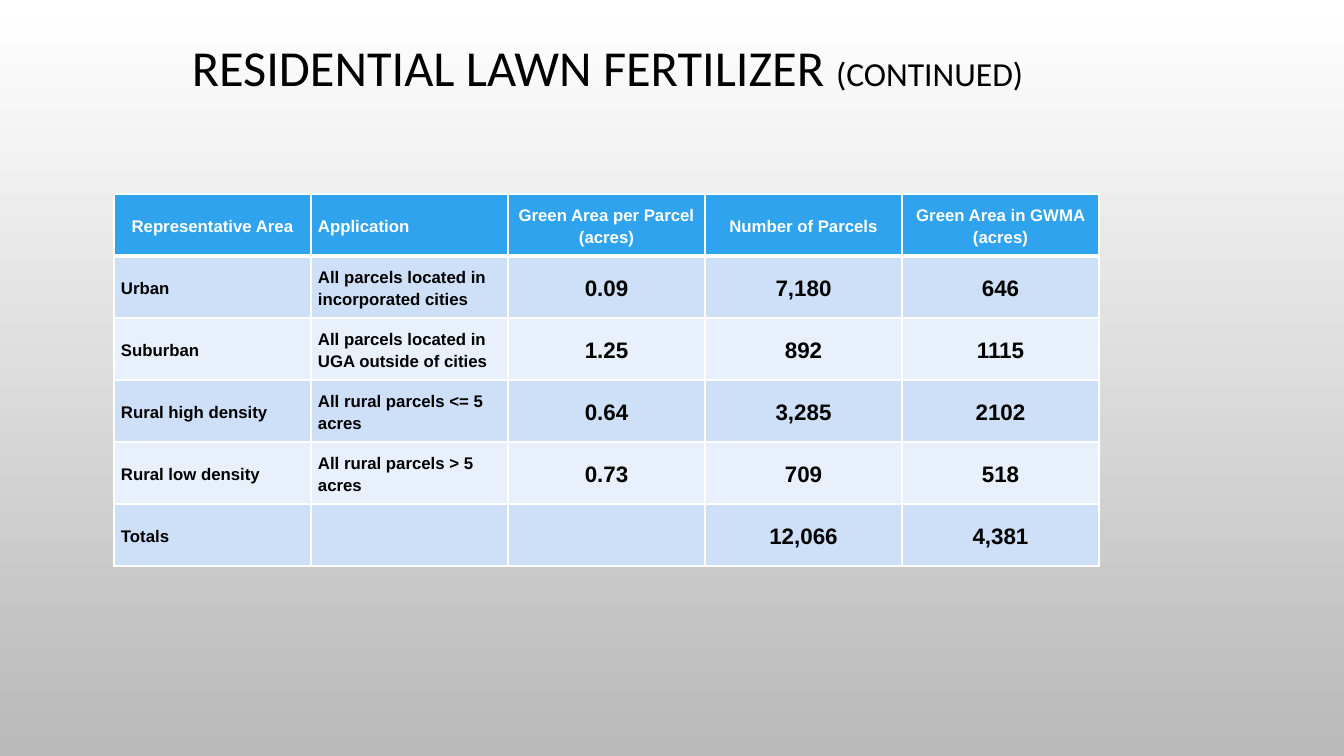
from lxml import etree
from pptx import Presentation
from pptx.dml.color import RGBColor
from pptx.enum.text import MSO_ANCHOR, PP_ALIGN
from pptx.oxml.ns import qn
from pptx.util import Pt

CENTER, LEFT = PP_ALIGN.CENTER, PP_ALIGN.LEFT
MIDDLE = MSO_ANCHOR.MIDDLE

TITLE = [("RESIDENTIAL LAWN FERTILIZER ", 36), ("(CONTINUED)", 24)]
HEADINGS = ["Representative Area", "Application", "Green Area per Parcel (acres)",
            "Number of Parcels", "Green Area in GWMA (acres)"]
AREAS = [
    ["Urban", "All parcels located in incorporated cities", "0.09", "7,180", "646"],
    ["Suburban", "All parcels located in UGA outside of cities", "1.25", "892", "1115"],
    ["Rural high density", "All rural parcels <= 5 acres", "0.64", "3,285", "2102"],
    ["Rural low density", "All rural parcels > 5 acres", "0.73", "709", "518"],
    ["Totals", "", "", "12,066", "4,381"],
]
HEADING_ALIGN = [CENTER, LEFT, CENTER, CENTER, CENTER]
AREA_ALIGN = [LEFT, LEFT, CENTER, CENTER, CENTER]
AREA_SIZES = [12, 12, 16, 16, 16]

BACKGROUND = ["FFFFFF", "B9B9B9"]
HEADING_FILL = "2FA3EE"
BANDS = ["CDE0F8", "E8F0FC"]
BLACK, WHITE = "000000", "FFFFFF"

TITLE_BOX = (89, 27, 1037, 86)
TABLE_LEFT, TABLE_TOP = 114, 194
COLUMN_WIDTH, ROW_HEIGHT = 197, 62
CELL_FORMAT = {"margin_left": 7, "margin_right": 7, "margin_top": 0, "margin_bottom": 0}


def px(length):
    return round(length * 914400 / 100.8)


def color(value):
    return RGBColor.from_string(value)


def add_run(paragraph, text, **font):
    """Add a run; ink is its hex colour, the rest are font attributes."""
    run = paragraph.add_run()
    run.text = text
    run.font.color.rgb = color(font.pop("ink"))
    for name, value in font.items():
        setattr(run.font, name, value)


def add_borders(cell, top, bottom):
    """Draw white cell edges; top and bottom widths are in points."""
    properties = cell._tc.get_or_add_tcPr()
    for edge, width in (("lnL", 1), ("lnR", 1), ("lnT", top), ("lnB", bottom)):
        line = etree.SubElement(properties, qn(f"a:{edge}"), w=str(Pt(width)))
        fill = etree.SubElement(line, qn("a:solidFill"))
        etree.SubElement(fill, qn("a:srgbClr"), val=WHITE)


def fill_cell(cell, text, align, size, ink, fill):
    for name, value in CELL_FORMAT.items():
        setattr(cell, name, px(value))
    cell.vertical_anchor = MIDDLE
    cell.fill.solid()
    cell.fill.fore_color.rgb = color(fill)
    if text:
        paragraph = cell.text_frame.paragraphs[0]
        paragraph.alignment = align
        paragraph.line_spacing = 1.15
        add_run(paragraph, text, ink=ink, size=Pt(size), name="Arial", bold=True)


def add_title(slide):
    frame = slide.shapes.add_textbox(*map(px, TITLE_BOX)).text_frame
    frame.word_wrap = True
    frame.vertical_anchor = MIDDLE
    paragraph = frame.paragraphs[0]
    paragraph.alignment = CENTER
    paragraph.line_spacing = 0.9
    for text, size in TITLE:
        add_run(paragraph, text, ink=BLACK, size=Pt(size), name="Calibri")


def add_area_table(slide):
    rows = [HEADINGS, *AREAS]
    table = slide.shapes.add_table(
        len(rows), len(HEADINGS), px(TABLE_LEFT), px(TABLE_TOP),
        px(COLUMN_WIDTH * len(HEADINGS)), px(ROW_HEIGHT * len(rows))).table
    for column in table.columns:
        column.width = px(COLUMN_WIDTH)
    for r, texts in enumerate(rows):
        table.rows[r].height = px(ROW_HEIGHT)
        for c, text in enumerate(texts):
            cell = table.cell(r, c)
            add_borders(cell, top=3 if r == 1 else 1, bottom=3 if r == 0 else 1)
            if r == 0:
                fill_cell(cell, text, HEADING_ALIGN[c], 12, WHITE, HEADING_FILL)
            else:
                fill_cell(cell, text, AREA_ALIGN[c], AREA_SIZES[c], BLACK,
                          BANDS[(r - 1) % 2])


def main():
    deck = Presentation()
    deck.slide_width, deck.slide_height = px(1344), px(756)
    slide = deck.slides.add_slide(deck.slide_layouts[6])
    background = slide.background.fill
    background.gradient()
    background.gradient_angle = 270
    for stop, value in zip(background.gradient_stops, BACKGROUND):
        stop.color.rgb = color(value)
    add_title(slide)
    add_area_table(slide)
    deck.save("out.pptx")


if __name__ == "__main__":
    main()
